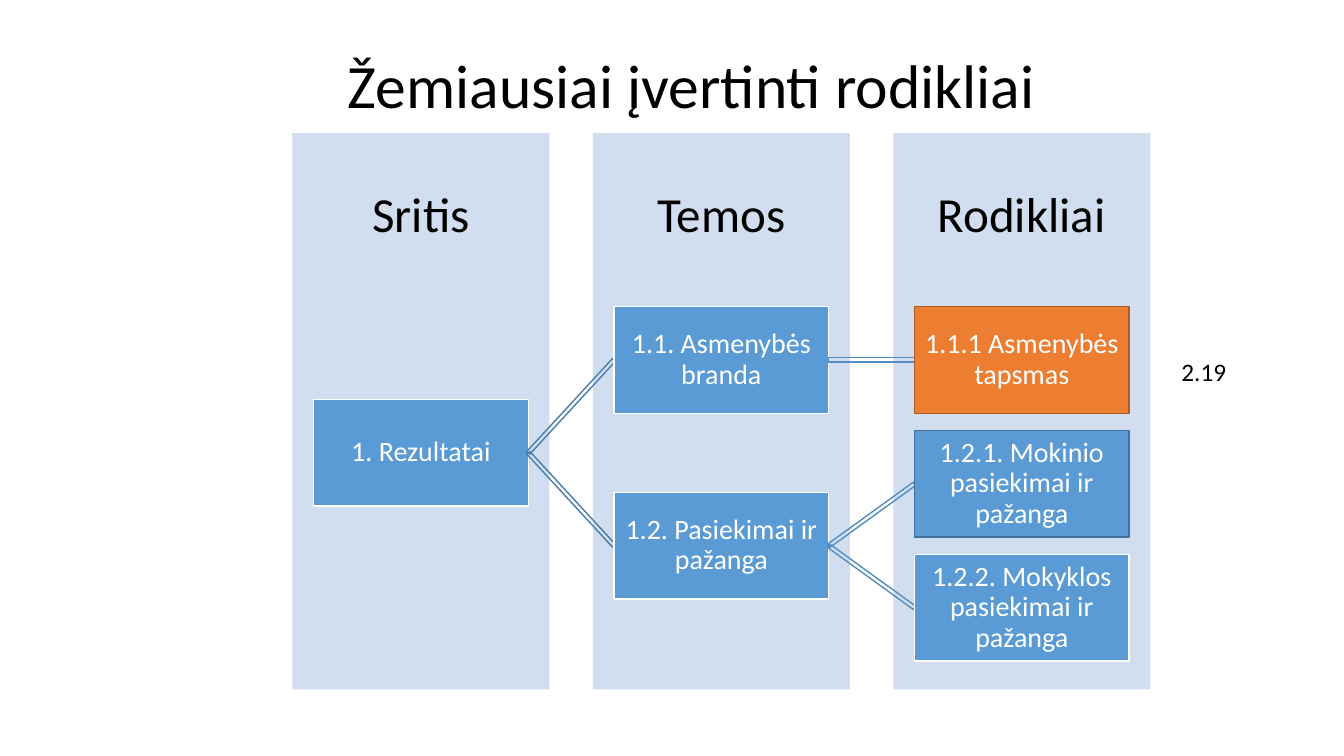
import math
from dataclasses import dataclass
from typing import Optional

import pptx
import pptx.dml.color
import pptx.enum.shapes
import pptx.enum.text
import pptx.util

Inches = pptx.util.Inches
Pt = pptx.util.Pt
PP_ALIGN = pptx.enum.text.PP_ALIGN
MSO_ANCHOR = pptx.enum.text.MSO_ANCHOR

BLACK, WHITE = "000000", "FFFFFF"
PALE_BLUE, BLUE, ORANGE = "D1DEEF", "5B9BD5", "ED7D31"

COLUMN_LEFT, COLUMN_TOP, COLUMN_PITCH = 2.9, 1.32, 2.98
COLUMN_WIDTH, COLUMN_HEIGHT = 2.55, 5.52
NODE_INDENT, NODE_WIDTH, NODE_HEIGHT = 0.21, 2.13, 1.06
ROW_TOP, ROW_PITCH = 3.04, 1.23
LINK_THICKNESS = 0.04
LINK_COLORS = {1: "487CAA", 2: "528CC1"}


@dataclass(frozen=True)
class Node:
    label: str
    level: int
    row: float
    parent: Optional["Node"] = None
    fill: str = BLUE
    border: str = WHITE

    @property
    def left(self) -> float:
        return COLUMN_LEFT + NODE_INDENT + self.level * COLUMN_PITCH

    @property
    def top(self) -> float:
        return ROW_TOP + self.row * ROW_PITCH


HEADINGS = ["Sritis", "Temos", "Rodikliai"]
results = Node("1. Rezultatai", 0, 0.75)
maturity = Node("1.1. Asmenybės branda", 1, 0, results)
achievement = Node("1.2. Pasiekimai ir pažanga", 1, 1.5, results)
NODES = [
    results,
    maturity,
    Node("1.1.1 Asmenybės tapsmas", 2, 0, maturity, ORANGE, "AF5C24"),
    achievement,
    Node("1.2.1. Mokinio pasiekimai ir pažanga", 2, 1, achievement, border="43729D"),
    Node("1.2.2. Mokyklos pasiekimai ir pažanga", 2, 2, achievement),
]


def rgb(color: str) -> pptx.dml.color.RGBColor:
    return pptx.dml.color.RGBColor.from_string(color)


def write(shape, text: str, size: float, color: str, insets: tuple,
          align=PP_ALIGN.CENTER, anchor=MSO_ANCHOR.MIDDLE, spacing: float = 1.0) -> None:
    """Set the text; insets run left, top, right, bottom in inches."""
    frame = shape.text_frame
    frame.text = text
    frame.word_wrap = True
    frame.vertical_anchor = anchor
    (frame.margin_left, frame.margin_top,
     frame.margin_right, frame.margin_bottom) = map(Inches, insets)
    paragraph = frame.paragraphs[0]
    paragraph.alignment = align
    paragraph.line_spacing = spacing
    font = paragraph.runs[0].font
    font.name = "Calibri"
    font.size = Pt(size)
    font.color.rgb = rgb(color)


def add_box(slide, left: float, top: float, width: float, height: float,
            fill: Optional[str] = None, border: Optional[str] = None):
    box = slide.shapes.add_shape(
        pptx.enum.shapes.MSO_SHAPE.RECTANGLE,
        Inches(left), Inches(top), Inches(width), Inches(height))
    box.shadow.inherit = False
    if fill:
        box.fill.solid()
        box.fill.fore_color.rgb = rgb(fill)
    else:
        box.fill.background()
    if border:
        box.line.color.rgb = rgb(border)
        box.line.width = Pt(1)
    else:
        box.line.fill.background()
    return box


def add_column(slide, index: int, heading: str) -> None:
    column = add_box(slide, COLUMN_LEFT + index * COLUMN_PITCH, COLUMN_TOP,
                     COLUMN_WIDTH, COLUMN_HEIGHT, PALE_BLUE)
    write(column, heading, 35, BLACK, (0.27, 0.27, 0.27, 4.14), spacing=0.9)


def add_link(slide, parent: Node, child: Node) -> None:
    """Draw a hollow bar from the parent's right side to the child's left side."""
    start = parent.left + NODE_WIDTH
    run, rise = child.left - start, child.top - parent.top
    length = math.hypot(run, rise)
    middle_x = start + run / 2
    middle_y = (parent.top + child.top + NODE_HEIGHT) / 2
    bar = add_box(slide, middle_x - length / 2, middle_y - LINK_THICKNESS / 2,
                  length, LINK_THICKNESS, border=LINK_COLORS[child.level])
    bar.rotation = math.degrees(math.atan2(rise, run))


def add_node(slide, node: Node) -> None:
    if node.parent:
        add_link(slide, node.parent, node)
    box = add_box(slide, node.left, node.top, NODE_WIDTH, NODE_HEIGHT,
                  node.fill, node.border)
    write(box, node.label, 20, WHITE, (0.04,) * 4, spacing=0.9)


def add_label(slide, left: float, top: float, width: float, height: float,
              text: str, size: float, align, anchor) -> None:
    label = slide.shapes.add_textbox(
        Inches(left), Inches(top), Inches(width), Inches(height))
    write(label, text, size, BLACK, (0.1, 0.05, 0.1, 0.05), align, anchor)


def main() -> None:
    deck = pptx.Presentation()
    deck.slide_width, deck.slide_height = Inches(13.33), Inches(7.5)
    slide = deck.slides.add_slide(deck.slide_layouts[6])

    add_label(slide, 1.11, 0.11, 11.5, 1.45, "Žemiausiai įvertinti rodikliai", 44,
              PP_ALIGN.CENTER, MSO_ANCHOR.MIDDLE)
    for index, heading in enumerate(HEADINGS):
        add_column(slide, index, heading)
    for node in NODES:
        add_node(slide, node)
    add_label(slide, 11.62, 3.49, 1.33, 0.4, "2.19", 18, PP_ALIGN.LEFT, MSO_ANCHOR.TOP)

    deck.save("out.pptx")


if __name__ == "__main__":
    main()
